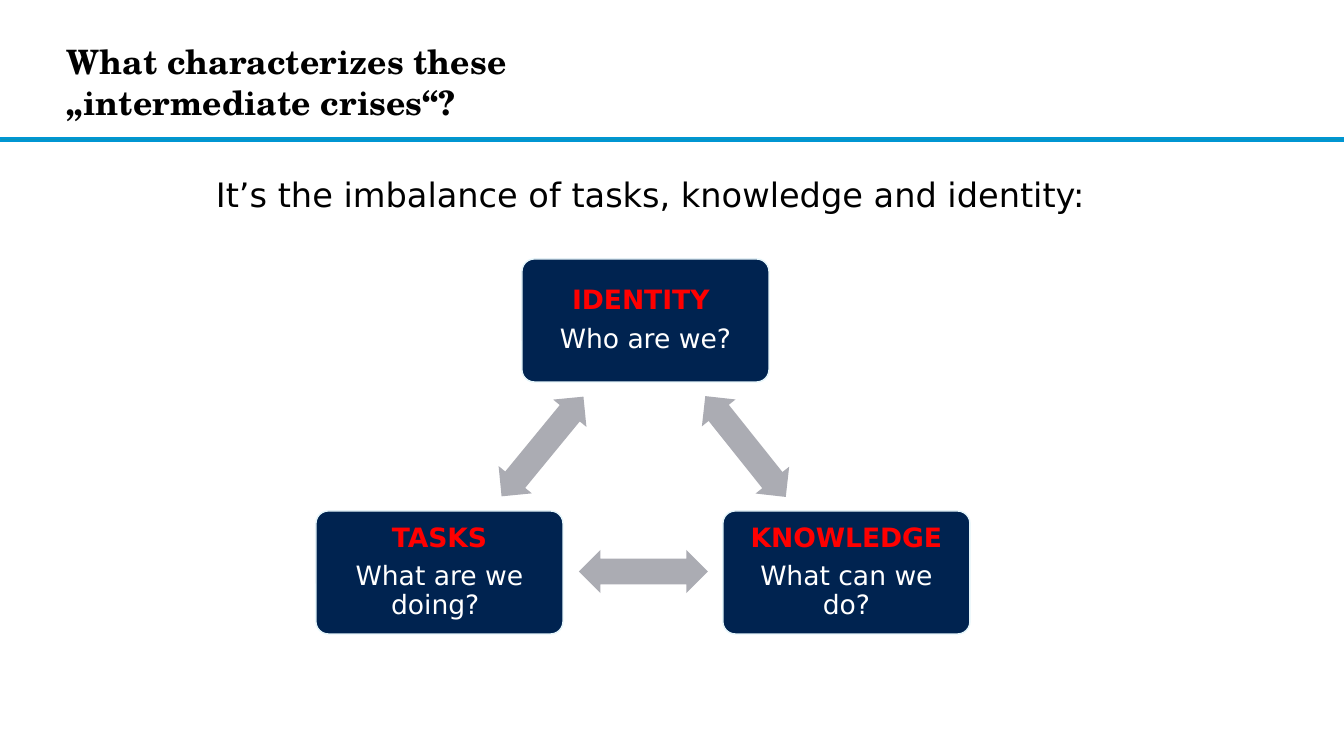
"""Build the slide on the imbalance of tasks, knowledge and identity."""
from dataclasses import dataclass

from pptx import Presentation
from pptx import util as u
from pptx.dml.color import RGBColor
from pptx.enum import shapes, text

PX = 914400 / 100.8


@dataclass(frozen=True)
class Theme:
    black: str = "000000"
    white: str = "FFFFFF"
    red: str = "FF0000"
    navy: str = "002350"
    box_line: str = "E5F5FA"
    grey: str = "ABACB3"
    rule: str = "0C94B7"
    rule_line: str = "0096D3"
    serif: str = "TeX Gyre Schola"
    sans: str = "DejaVu Sans"
    large: int = 24
    label: int = 19


theme = Theme()


def add_block(kind, box, fill, line=None):
    shape = slide.shapes.add_shape(kind, *(round(n * PX) for n in box))
    shape.shadow.inherit = False
    shape.fill.solid()
    shape.fill.fore_color.rgb = RGBColor.from_string(fill)
    if line:
        shape.line.color.rgb = RGBColor.from_string(line)
        shape.line.width = u.Pt(1)
    else:
        shape.line.fill.background()
    return shape


def style(paragraph, name, size, color, bold=False):
    font = paragraph.font
    font.name, font.size, font.bold = name, u.Pt(size), bold
    font.color.rgb = RGBColor.from_string(color)


presentation = Presentation()
presentation.slide_width = round(1344 * PX)
presentation.slide_height = round(756 * PX)
slide = presentation.slides.add_slide(presentation.slide_layouts[6])

add_block(shapes.MSO_SHAPE.RECTANGLE, (0, 138, 1344, 3), theme.rule, theme.rule_line)

title = slide.shapes.add_textbox(*(round(n * PX) for n in (67, 25, 948, 113)))
frame = title.text_frame
frame.word_wrap = True
frame.vertical_anchor = text.MSO_ANCHOR.MIDDLE
frame.margin_left = frame.margin_top = frame.margin_right = frame.margin_bottom = 0
paragraph = frame.paragraphs[0]
paragraph.add_run().text = "What characterizes these "
paragraph.add_line_break()
paragraph.add_run().text = "„intermediate crises“?"
style(paragraph, theme.serif, theme.large, theme.black, True)

boxes = [
    (522, 259, "IDENTITY ", "Who are we?"),
    (723, 511, "KNOWLEDGE", "What can we do?"),
    (316, 511, "TASKS", "What are we doing? "),
]
for left, top, heading, question in boxes:
    box = add_block(shapes.MSO_SHAPE.ROUNDED_RECTANGLE, (left, top, 247, 123),
                    theme.navy, theme.box_line)
    box.adjustments[0] = 0.1
    frame = box.text_frame
    frame.word_wrap = True
    frame.vertical_anchor = text.MSO_ANCHOR.MIDDLE
    frame.margin_left = frame.margin_top = round(8 * PX)
    frame.margin_right = frame.margin_bottom = round(8 * PX)
    lines = (frame.paragraphs[0], frame.add_paragraph())
    for paragraph, words, color in zip(lines, (heading, question), (theme.red, theme.white)):
        paragraph.text = words
        paragraph.alignment = text.PP_ALIGN.CENTER
        paragraph.line_spacing = 0.9
        paragraph.space_after = u.Pt(7)
        style(paragraph, theme.sans, theme.label, color, color == theme.red)

for left, top, rotation in [(681, 425, 51.4), (579, 550, 180), (478, 425, 309.4)]:
    arrow = add_block(shapes.MSO_SHAPE.LEFT_RIGHT_ARROW, (left, top, 129, 43), theme.grey)
    arrow.adjustments[0] = 0.6
    arrow.adjustments[1] = 0.5
    arrow.rotation = rotation

caption = slide.shapes.add_textbox(*(round(n * PX) for n in (206, 169, 909, 50)))
frame = caption.text_frame
frame.word_wrap = False
frame.auto_size = text.MSO_AUTO_SIZE.SHAPE_TO_FIT_TEXT
paragraph = frame.paragraphs[0]
paragraph.text = "It’s the imbalance of tasks, knowledge and identity:"
style(paragraph, theme.sans, theme.large, theme.black)

presentation.save("out.pptx")
